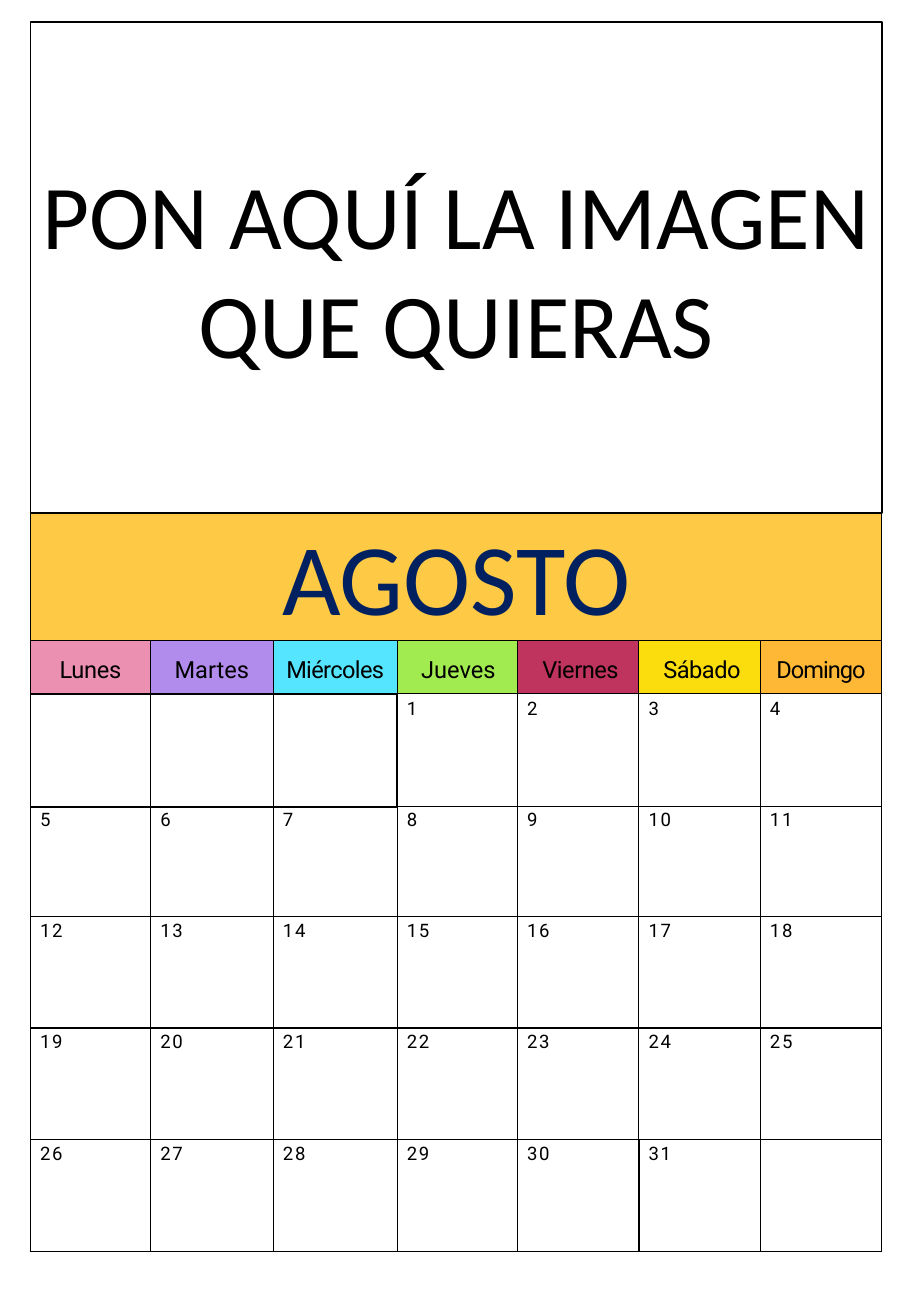
from lxml import etree
from pptx import Presentation
from pptx.dml import color
from pptx.enum import text
from pptx.oxml import ns
from pptx.util import Inches, Pt

BLACK, WHITE, NAVY, AMBER = "000000", "FFFFFF", "002060", "FEC945"
LEFT, WIDTH = 0.25, 7.01
PROMPT = "PON AQUÍ LA IMAGEN QUE QUIERAS"
PROMPT_TOP, PROMPT_HEIGHT = 0.18, 4.04
MONTH = "AGOSTO"
MONTH_TOP, MONTH_HEIGHT = 4.22, 1.05
CALENDAR_TOP = 5.27
COLUMNS = [0.99, 1.01, 1.02, 0.99, 1, 1, 1]
ROWS = [0.44, 0.93, 0.9, 0.92, 0.92, 0.92]
DAY_INSETS = [0.04, 0.02, 0.03, 0.03, 0.03]
WEEKDAYS = [
    ("Lunes", "EB90B0", -0.2, 0),
    ("Martes", "B18CEC", 0, 0),
    ("Miércoles", "55E5FF", -0.4, 0),
    ("Jueves", "A1EB51", 0, 0.02),
    ("Viernes", "BE345E", -0.3, 0.04),
    ("Sábado", "FBDD0D", -0.3, 0.04),
    ("Domingo", "FFB836", -0.6, 0),
]
FIRST_COLUMN, LAST_DAY = 3, 31
THIN, THICK = 0.75, 1
SIDES = {"L": (0, -1), "R": (0, 1), "T": (-1, 0), "B": (1, 0)}


def rgb(value):
    return color.RGBColor.from_string(value)


def write(para, words, font, size, ink, spacing=0):
    span = para.add_run()
    span.text = words
    para.font.name = font
    para.font.size = Pt(size)
    para.font.color.rgb = rgb(ink)
    if spacing:
        span._r.get_or_add_rPr().set("spc", str(round(spacing * 100)))


def format_cell(cell, fill, widths, left=0, top=0.05):
    properties = cell._tc.get_or_add_tcPr()
    for side in SIDES:
        line = etree.SubElement(properties, ns.qn(f"a:ln{side}"), w=str(Pt(widths[side])))
        solid = etree.SubElement(line, ns.qn("a:solidFill"))
        etree.SubElement(solid, ns.qn("a:srgbClr"), val=BLACK)
    cell.fill.solid()
    cell.fill.fore_color.rgb = rgb(fill)
    cell.margin_left, cell.margin_top = Inches(left), Inches(top)
    cell.margin_right = cell.margin_bottom = 0


def center_cell(cell):
    cell.vertical_anchor = text.MSO_ANCHOR.MIDDLE
    para = cell.text_frame.paragraphs[0]
    para.alignment = text.PP_ALIGN.CENTER
    para.space_before = Pt(4.2)
    return para


def add_grid(page, top, columns, rows):
    frame = page.shapes.add_table(
        len(rows), len(columns), Inches(LEFT), Inches(top), Inches(WIDTH), Inches(sum(rows))
    )
    grid = frame.table
    grid.first_row = grid.horz_banding = False
    for column, width in zip(grid.columns, columns):
        column.width = Inches(width)
    for row, height in zip(grid.rows, rows):
        row.height = Inches(height)
    return grid


def add_month(page):
    cell = add_grid(page, MONTH_TOP, [WIDTH], [MONTH_HEIGHT]).cell(0, 0)
    format_cell(cell, AMBER, {"L": THIN, "R": THIN, "T": THIN, "B": THICK})
    write(center_cell(cell), MONTH, "Calibri", 60, NAVY)


def day_number(row, column):
    return (row - 1) * len(COLUMNS) + column - FIRST_COLUMN + 1


def is_heavy(row, column):
    inside = 1 <= row < len(ROWS) and 0 <= column < len(COLUMNS)
    return inside and not 1 <= day_number(row, column) < LAST_DAY


def border_widths(row, column):
    return {
        side: THICK if is_heavy(row, column) or is_heavy(row + down, column + across) else THIN
        for side, (down, across) in SIDES.items()
    }


def add_calendar(page):
    grid = add_grid(page, CALENDAR_TOP, COLUMNS, ROWS)
    for column, (name, fill, spacing, indent) in enumerate(WEEKDAYS):
        cell = grid.cell(0, column)
        format_cell(cell, fill, border_widths(0, column), indent)
        write(center_cell(cell), name, "Roboto", 14, BLACK, spacing)
    for row, inset in enumerate(DAY_INSETS, start=1):
        for column in range(len(COLUMNS)):
            cell = grid.cell(row, column)
            format_cell(cell, WHITE, border_widths(row, column), 0.08, inset)
            day = day_number(row, column)
            if 1 <= day <= LAST_DAY:
                para = cell.text_frame.paragraphs[0]
                para.space_before = Pt(4.8)
                write(para, str(day), "Roboto", 11, BLACK, 1)


def add_prompt(page):
    box = page.shapes.add_shape(
        1, Inches(LEFT), Inches(PROMPT_TOP), Inches(WIDTH), Inches(PROMPT_HEIGHT)
    )
    box.shadow.inherit = False
    box.fill.solid()
    box.fill.fore_color.rgb = rgb(WHITE)
    box.line.color.rgb = rgb(BLACK)
    box.line.width = Pt(THICK)
    box.text_frame.word_wrap = True
    box.text_frame.vertical_anchor = text.MSO_ANCHOR.MIDDLE
    para = box.text_frame.paragraphs[0]
    para.alignment = text.PP_ALIGN.CENTER
    write(para, PROMPT, "Calibri", 54, BLACK)


def main():
    deck = Presentation()
    deck.slide_width, deck.slide_height = Inches(7.5), Inches(10.83)
    page = deck.slides.add_slide(deck.slide_layouts[6])
    add_month(page)
    add_calendar(page)
    add_prompt(page)
    deck.save("out.pptx")


if __name__ == "__main__":
    main()
